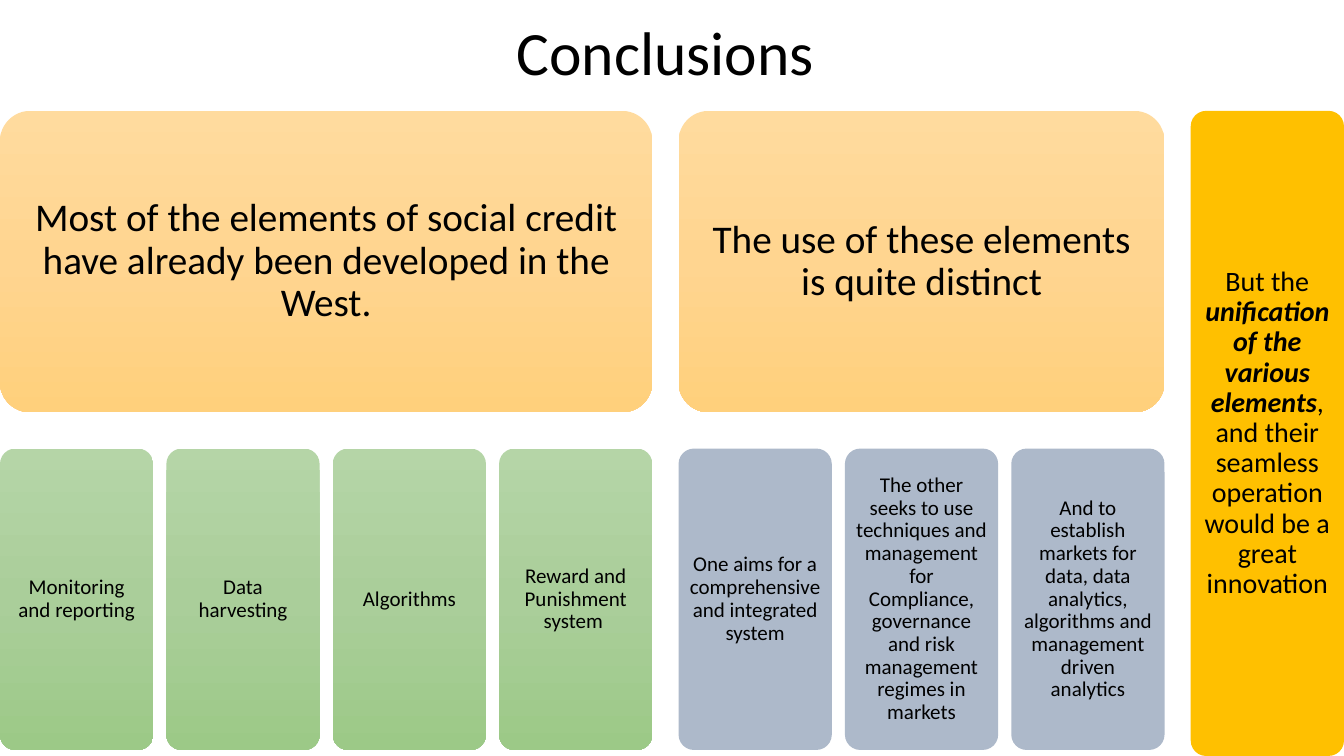
"""Build the Conclusions slide: two themes with their elements and a final remark."""
import copy

import pptx
import pptx.dml.color
import pptx.enum.shapes
import pptx.enum.text
import pptx.oxml.ns
import pptx.util

Inches = pptx.util.Inches
Pt = pptx.util.Pt
RGBColor = pptx.dml.color.RGBColor
BLACK = RGBColor(0x00, 0x00, 0x00)
BLUE_GREY = RGBColor(0xAD, 0xB9, 0xCA)
GOLD = RGBColor(0xFF, 0xC0, 0x00)
ORANGES = [RGBColor(0xFF, 0xDB, 0x9E), RGBColor(0xFF, 0xD5, 0x90), RGBColor(0xFF, 0xD0, 0x7C)]
GREENS = [RGBColor(0xB5, 0xD5, 0xA7), RGBColor(0xAA, 0xCE, 0x9A), RGBColor(0x9C, 0xC9, 0x87)]

CARD_W, CARD_H, STEP = 1.52, 2.99, 1.65
THEME_TOP, CARD_TOP = 1.1, 4.45
GROUP_GAP = 0.26


def format_text(tf, size):
    tf.word_wrap = True
    tf.auto_size = pptx.enum.text.MSO_AUTO_SIZE.NONE
    tf.vertical_anchor = pptx.enum.text.MSO_ANCHOR.MIDDLE
    p = tf.paragraphs[0]
    p.alignment = pptx.enum.text.PP_ALIGN.CENTER
    p.line_spacing = 0.9
    p.font.name = "Calibri"
    p.font.size = Pt(size)
    p.font.color.rgb = BLACK


def add_card(left, top, width, height, colors, runs, size, inset):
    s = slide.shapes.add_shape(
        pptx.enum.shapes.MSO_SHAPE.ROUNDED_RECTANGLE,
        Inches(left), Inches(top), Inches(width), Inches(height))
    s.adjustments[0] = 0.1
    s.shadow.inherit = False
    s.line.fill.background()
    if len(colors) == 1:
        s.fill.solid()
        s.fill.fore_color.rgb = colors[0]
    else:
        s.fill.gradient()
        s.fill.gradient_angle = 270
        first = s._element.spPr.find(".//" + pptx.oxml.ns.qn("a:gs"))
        first.addnext(copy.deepcopy(first))
        for stop, color, position in zip(s.fill.gradient_stops, colors, (0, 0.5, 1)):
            stop.color.rgb = color
            stop.position = position
    tf = s.text_frame
    tf.margin_left = tf.margin_right = tf.margin_top = tf.margin_bottom = Inches(inset)
    for text, emphasis in runs:
        r = tf.paragraphs[0].add_run()
        r.text = text
        if emphasis:
            r.font.bold = r.font.italic = True
    format_text(tf, size)


prs = pptx.Presentation()
prs.slide_width = Inches(13.33)
prs.slide_height = Inches(7.5)
slide = prs.slides.add_slide(prs.slide_layouts[5])

title = slide.shapes.title
title.left, title.top = Inches(0.92), Inches(0)
title.width, title.height = Inches(11.5), Inches(1.1)
title.text_frame.text = "Conclusions "
format_text(title.text_frame, 44)

themes = [
    ("Most of the elements of social credit have already been developed in the West.", GREENS, [
        "Monitoring and reporting",
        "Data harvesting",
        "Algorithms",
        "Reward and Punishment system ",
    ]),
    ("The use of these elements is quite distinct", [BLUE_GREY], [
        "One aims for a comprehensive and integrated system",
        "The other seeks to use techniques and management for Compliance, "
        "governance and risk management regimes in markets",
        "And to establish markets for data, data analytics, algorithms "
        "and management driven analytics",
    ]),
]

left = 0
for theme, colors, elements in themes:
    width = STEP * (len(elements) - 1) + CARD_W
    add_card(left, THEME_TOP, width, CARD_H, ORANGES, [(theme, False)], 28, 0.12)
    for i, element in enumerate(elements):
        add_card(left + i * STEP, CARD_TOP, CARD_W, CARD_H, colors, [(element, False)], 15, 0.06)
    left += width + GROUP_GAP

remark = [
    ("But the ", False),
    ("unification of the various elements", True),
    (", and their seamless operation would be a great innovation", False),
]
add_card(left, THEME_TOP, CARD_W, 6.4, [GOLD], remark, 20, 0.08)

prs.save("out.pptx")
